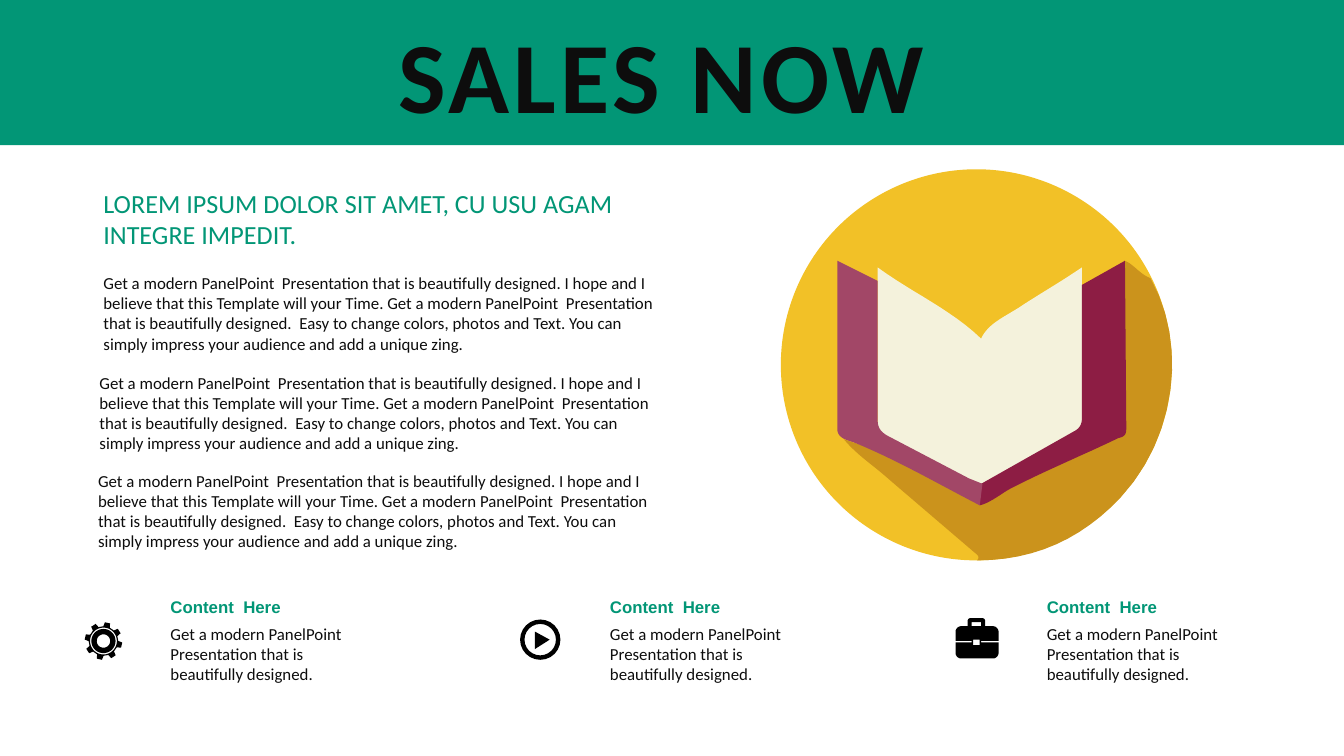
"""Build the sales slide with a book illustration and three icon captions."""
from math import cos, sin, radians

from pptx import Presentation
from pptx.dml.color import RGBColor
from pptx.enum.shapes import MSO_SHAPE
from pptx.enum.text import MSO_ANCHOR, MSO_AUTO_SIZE, PP_ALIGN
from pptx.util import Inches, Pt

GREEN = RGBColor(0x02, 0x96, 0x76)
INK = RGBColor(0x0D, 0x0D, 0x0D)
BLACK = RGBColor(0x00, 0x00, 0x00)
YELLOW = RGBColor(0xF2, 0xC1, 0x27)
OCHRE = RGBColor(0xCB, 0x93, 0x1C)
CREAM = RGBColor(0xF4, 0xF2, 0xDC)
WINE = RGBColor(0x8D, 0x1D, 0x44)
MAUVE = RGBColor(0xA2, 0x47, 0x67)

BODY = ("Get a modern PanelPoint  Presentation that is beautifully designed. I hope and I "
        "believe that this Template will your Time. Get a modern PanelPoint  Presentation "
        "that is beautifully designed.  Easy to change colors, photos and Text. You can "
        "simply impress your audience and add a unique zing.")
CAPTION = "Get a modern PanelPoint  Presentation that is beautifully designed."

prs = Presentation()
prs.slide_width, prs.slide_height = Inches(10), Inches(10) * 9 // 16
s = prs.slides.add_slide(prs.slide_layouts[6])


def add_text(box, text, font, frame={}, para={}):
    tf = s.shapes.add_textbox(*map(Inches, box)).text_frame
    p = tf.paragraphs[0]
    r = p.add_run()
    r.text = text
    font = {"name": "Calibri", "size": Pt(9), **font}
    r.font.color.rgb = font.pop("color", INK)
    for obj, values in ((tf, {"word_wrap": True, **frame}), (p, para), (r.font, font)):
        for name, value in values.items():
            setattr(obj, name, value)
    return r


def draw(color, *contours):
    builder = None
    for contour in contours:
        points = [contour[0]]
        for step in contour[1:]:
            if len(step) == 2:
                points.append(step)
                continue
            nodes = points[-1] + step
            for t in (i / 12 for i in range(1, 13)):
                weights = ((1 - t) ** 3, 3 * t * (1 - t) ** 2, 3 * t * t * (1 - t), t ** 3)
                points.append(tuple(sum(w * v for w, v in zip(weights, nodes[k::2]))
                                    for k in (0, 1)))
        points = [(Inches(x), Inches(y)) for x, y in points]
        if builder is None:
            builder = s.shapes.build_freeform(*points[0])
        else:
            builder.move_to(*points[0])
        builder.add_line_segments(points[1:], close=True)
    sp = builder.convert_to_shape()
    sp.shadow.inherit = False
    sp.fill.solid()
    sp.fill.fore_color.rgb = color
    sp.line.fill.background()


presets = {}
for name, kind, box, color in (
    ("header", MSO_SHAPE.RECTANGLE, (0, 0, 10, 1.08), GREEN),
    ("play ring", MSO_SHAPE.DONUT, (3.87, 4.61, 0.3, 0.3), BLACK),
    ("disc", MSO_SHAPE.OVAL, (5.81, 1.26, 2.91, 2.91), YELLOW),
):
    sp = s.shapes.add_shape(kind, *map(Inches, box))
    sp.shadow.inherit = False
    sp.fill.solid()
    sp.fill.fore_color.rgb = color
    sp.line.fill.background()
    presets[name] = sp
presets["play ring"].adjustments[0] = 0.11

GROW = {"auto_size": MSO_AUTO_SIZE.SHAPE_TO_FIT_TEXT}
MIDDLE = {"vertical_anchor": MSO_ANCHOR.MIDDLE}
title = add_text((1.12, -0.25, 7.6, 1.5), "SALES NOW", {"size": Pt(54), "bold": True}, MIDDLE,
                 {"alignment": PP_ALIGN.CENTER, "line_spacing": 1.1, "space_before": Pt(10)})
title.font._element.set("spc", "220")
add_text((0.67, 1.34, 4.38, 0.57), "LOREM IPSUM DOLOR SIT AMET, CU USU AGAM INTEGRE IMPEDIT.",
         {"size": Pt(14), "color": GREEN}, {**GROW, **MIDDLE})
for x, y in ((0.77, 1.98), (0.74, 2.72), (0.73, 3.45)):
    add_text((x, y, 4.26, 0.82), BODY, {}, {"margin_left": 0}, {"space_before": Pt(1.8)})
for x in (1.17, 4.44, 7.69):
    add_text((x, 4.39, 1.72, 0.25), "Content  Here",
             {"name": "Arial", "bold": True, "color": GREEN}, {**GROW, **MIDDLE})
    add_text((x, 4.59, 1.72, 0.56), CAPTION, {}, GROW)

teeth = [(radius, 45 * i + 12.5 + turn) for i in range(8)
         for radius, turn in ((0.11, -13), (0.14, -8), (0.14, 8), (0.11, 13))]
rings = [[(radius, 10 * i) for i in range(36)] for radius in (0.1, 0.09, 0.05)]
draw(BLACK, *[[(0.77 + radius * sin(radians(a)), 4.77 - radius * cos(radians(a)))
               for radius, a in contour] for contour in (teeth, *rings)])

draw(BLACK, [(3.98, 4.7), (4.09, 4.76), (3.98, 4.83)])

draw(BLACK,
     [(7.22, 4.6), (7.31, 4.6), (7.32, 4.6, 7.33, 4.61, 7.33, 4.62), (7.33, 4.66), (7.39, 4.66),
      (7.41, 4.66, 7.43, 4.68, 7.43, 4.7), (7.43, 4.77), (7.3, 4.77), (7.3, 4.78), (7.43, 4.78),
      (7.43, 4.86), (7.43, 4.88, 7.41, 4.9, 7.39, 4.9), (7.15, 4.9),
      (7.13, 4.9, 7.11, 4.88, 7.11, 4.86), (7.11, 4.78), (7.23, 4.78), (7.23, 4.77),
      (7.11, 4.77), (7.11, 4.7), (7.11, 4.68, 7.13, 4.66, 7.15, 4.66), (7.2, 4.66), (7.2, 4.62),
      (7.2, 4.61, 7.21, 4.6, 7.22, 4.6)],
     [(7.23, 4.63), (7.3, 4.63), (7.3, 4.66), (7.23, 4.66)],
     [(7.24, 4.76), (7.29, 4.76), (7.29, 4.8), (7.24, 4.8)])

draw(OCHRE, [(8.37, 1.94), (8.44, 1.97, 8.48, 2.04, 8.56, 2.07),
             (8.84, 2.56, 8.75, 3.26, 8.34, 3.7), (8.05, 4.01, 7.7, 4.17, 7.27, 4.17),
             (7.3, 4.14, 7.26, 4.12, 7.25, 4.11), (6.63, 3.58),
             (6.51, 3.47, 6.38, 3.39, 6.28, 3.27), (7.3, 3.6), (8.3, 3.2)])
draw(CREAM, [(6.53, 1.99), (6.79, 2.18, 7.07, 2.3, 7.3, 2.52),
             (7.35, 2.41, 7.47, 2.36, 7.58, 2.29), (7.73, 2.19, 7.89, 2.1, 8.05, 1.99),
             (8.05, 3.09), (8.05, 3.16, 8.05, 3.21, 8, 3.23), (7.38, 3.58),
             (7.32, 3.62, 7.27, 3.62, 7.21, 3.59), (6.6, 3.26),
             (6.54, 3.23, 6.53, 3.19, 6.53, 3.12)])
draw(WINE, [(7.3, 3.6), (7.99, 3.21), (8.03, 3.19, 8.05, 3.16, 8.05, 3.11), (8.05, 2.12),
            (8.37, 1.94), (8.38, 3.19), (8.38, 3.24, 8.36, 3.25, 8.32, 3.26),
            (8.05, 3.39, 7.78, 3.5, 7.51, 3.64), (7.44, 3.68, 7.37, 3.74, 7.29, 3.76)])
draw(MAUVE, [(7.31, 3.6), (7.29, 3.76), (6.98, 3.6, 6.67, 3.42, 6.35, 3.29),
             (6.28, 3.27, 6.23, 3.25, 6.23, 3.19), (6.23, 1.94), (6.53, 2.09), (6.53, 3.12),
             (6.53, 3.18, 6.55, 3.21, 6.6, 3.24), (7.21, 3.56)])

prs.save("out.pptx")
